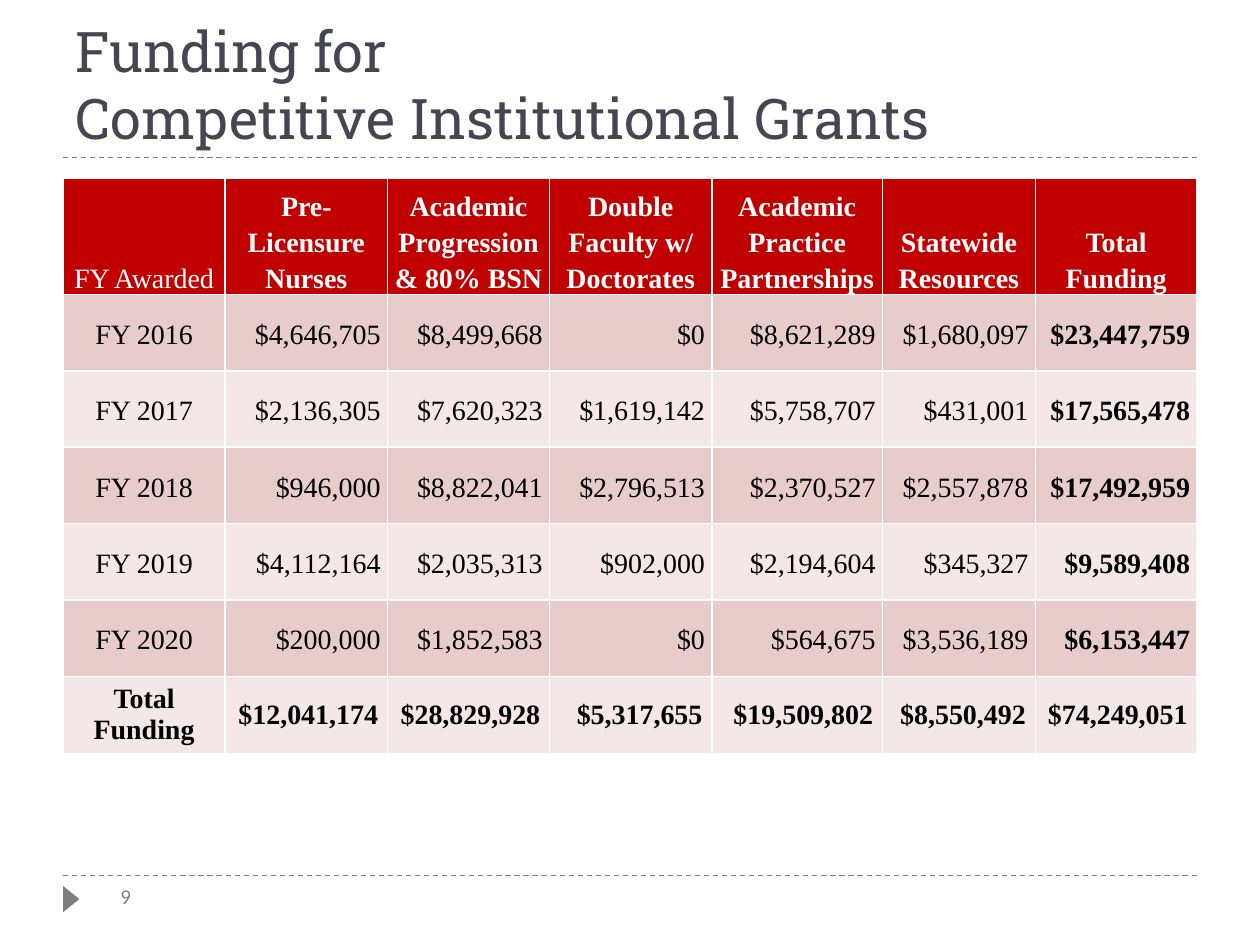
from dataclasses import dataclass

from lxml import etree
from pptx import Presentation
from pptx.dml.color import RGBColor
from pptx.enum.dml import MSO_LINE
from pptx.enum.shapes import MSO_CONNECTOR, MSO_SHAPE
from pptx.enum.text import MSO_ANCHOR, MSO_AUTO_SIZE, PP_ALIGN
from pptx.oxml.ns import qn
from pptx.util import Cm, Pt

LEFT, CENTER, RIGHT = PP_ALIGN.LEFT, PP_ALIGN.CENTER, PP_ALIGN.RIGHT
MIDDLE, BOTTOM = MSO_ANCHOR.MIDDLE, MSO_ANCHOR.BOTTOM
STRAIGHT, DASH = MSO_CONNECTOR.STRAIGHT, MSO_LINE.DASH
TRIANGLE, NO_FIT = MSO_SHAPE.ISOSCELES_TRIANGLE, MSO_AUTO_SIZE.NONE

COLORS = {
    "title": "464653", "rule": "7F7F7F", "number": "808080",
    "header": "C00000", "odd": "E8CCCC", "even": "F4E7E7",
    "white": "FFFFFF", "black": "000000",
}
MARGIN, WIDTH = 1.27, 22.86
COL_WIDTHS = [3.27, 3.27, 3.27, 3.27, 3.44, 3.08, 3.26]
HEADER_HEIGHT, ROW_HEIGHT = 2.14, 1.54

ROWS = [
    ["FY Awarded", "Pre-Licensure Nurses", "Academic Progression & 80% BSN",
     "Double Faculty w/ Doctorates", "Academic Practice Partnerships",
     "Statewide Resources", "Total Funding"],
    ["FY 2016", "$4,646,705", "$8,499,668", "$0", "$8,621,289", "$1,680,097", "$23,447,759"],
    ["FY 2017", "$2,136,305", "$7,620,323", "$1,619,142", "$5,758,707", "$431,001", "$17,565,478"],
    ["FY 2018", "$946,000", "$8,822,041", "$2,796,513", "$2,370,527", "$2,557,878", "$17,492,959"],
    ["FY 2019", "$4,112,164", "$2,035,313", "$902,000", "$2,194,604", "$345,327", "$9,589,408"],
    ["FY 2020", "$200,000", "$1,852,583", "$0", "$564,675", "$3,536,189", "$6,153,447"],
    ["Total Funding", "$12,041,174", "$28,829,928", "$5,317,655", "$19,509,802",
     "$8,550,492", "$74,249,051"],
]


@dataclass
class CellStyle:
    fill: str
    color: str
    bold: bool
    align: PP_ALIGN
    anchor: MSO_ANCHOR
    spacing: float
    inset_x: float
    inset_y: float


def rgb(name: str) -> RGBColor:
    return RGBColor.from_string(COLORS[name])


def set_attrs(obj, values: dict) -> None:
    for name, value in values.items():
        setattr(obj, name, value)


def format_font(font, face: str, size: float, color: str, bold: bool = False) -> None:
    set_attrs(font, {"name": face, "size": Pt(size), "bold": bold})
    font.color.rgb = rgb(color)


def add_rule(slide, y: float) -> None:
    line = slide.shapes.add_connector(STRAIGHT, Cm(MARGIN), Cm(y), Cm(MARGIN + WIDTH), Cm(y))
    set_attrs(line.line, {"width": Pt(0.75), "dash_style": DASH})
    line.line.color.rgb = rgb("rule")
    etree.SubElement(line.element.spPr, qn("a:effectLst"))


def add_borders(cell) -> None:
    tc_pr = cell._tc.get_or_add_tcPr()
    for i, tag in enumerate(("a:lnL", "a:lnR", "a:lnT", "a:lnB")):
        ln = etree.Element(qn(tag), w=str(Pt(1)))
        fill = etree.SubElement(ln, qn("a:solidFill"))
        etree.SubElement(fill, qn("a:srgbClr"), val=COLORS["white"])
        tc_pr.insert(i, ln)


def cell_style(row: int, col: int) -> CellStyle:
    header, total = row == 0, row == len(ROWS) - 1
    return CellStyle(
        fill="header" if header else "odd" if row % 2 else "even",
        color="white" if header else "black",
        bold=total or (col > 0 if header else col == len(COL_WIDTHS) - 1),
        align=CENTER if header or col == 0 else RIGHT,
        anchor=BOTTOM if header else MIDDLE,
        spacing=1.0 if total else 1.15,
        inset_x=0.19 if total else 0.14,
        inset_y=0.1 if total else 0,
    )


def fill_cell(cell, text: str, style: CellStyle) -> None:
    cell.text = text
    x, y = Cm(style.inset_x), Cm(style.inset_y)
    set_attrs(cell, {"vertical_anchor": style.anchor, "margin_left": x, "margin_right": x,
                     "margin_top": y, "margin_bottom": y})
    cell.fill.solid()
    cell.fill.fore_color.rgb = rgb(style.fill)
    p = cell.text_frame.paragraphs[0]
    set_attrs(p, {"alignment": style.align, "line_spacing": style.spacing})
    format_font(p.runs[0].font, "Times New Roman", 16, style.color, style.bold)
    add_borders(cell)


def add_title(slide) -> None:
    title = slide.shapes.title
    set_attrs(title, {"left": Cm(MARGIN), "top": Cm(0.43), "width": Cm(WIDTH), "height": Cm(2.74)})
    tf = title.text_frame
    tf.text = "Funding for\vCompetitive Institutional Grants"
    set_attrs(tf, {"vertical_anchor": BOTTOM, "auto_size": NO_FIT, "word_wrap": True})
    p = tf.paragraphs[0]
    set_attrs(p, {"alignment": LEFT, "line_spacing": 1.0})
    for r in p.runs:
        format_font(r.font, "Roboto Slab", 32, "title")


def add_funding_table(slide) -> None:
    height = HEADER_HEIGHT + ROW_HEIGHT * (len(ROWS) - 1)
    table = slide.shapes.add_table(len(ROWS), len(COL_WIDTHS), Cm(MARGIN), Cm(3.6),
                                   Cm(WIDTH), Cm(height)).table
    for column, width in zip(table.columns, COL_WIDTHS):
        column.width = Cm(width)
    for i, texts in enumerate(ROWS):
        table.rows[i].height = Cm(ROW_HEIGHT if i else HEADER_HEIGHT)
        for j, text in enumerate(texts):
            fill_cell(table.cell(i, j), text, cell_style(i, j))


def add_footer(slide) -> None:
    marker = slide.shapes.add_shape(TRIANGLE, Cm(1.17), Cm(17.96), Cm(0.53), Cm(0.33))
    marker.rotation = 90
    marker.shadow.inherit = False
    marker.fill.solid()
    marker.fill.fore_color.rgb = rgb("rule")
    marker.line.fill.background()

    tf = slide.shapes.add_textbox(Cm(2.18), Cm(17.68), Cm(1.04), Cm(0.76)).text_frame
    tf.text = "9"
    tf.word_wrap = False
    format_font(tf.paragraphs[0].runs[0].font, "Calibri", 12, "number")


def main() -> None:
    prs = Presentation()
    set_attrs(prs, {"slide_width": Cm(25.4), "slide_height": Cm(19.05)})
    slide = prs.slides.add_slide(prs.slide_layouts[5])

    # Rules above the footer and below the title
    for y in (17.65, 3.17):
        add_rule(slide, y)

    # Footer, heading and table
    add_footer(slide)
    add_title(slide)
    add_funding_table(slide)
    prs.save("out.pptx")


if __name__ == "__main__":
    main()
